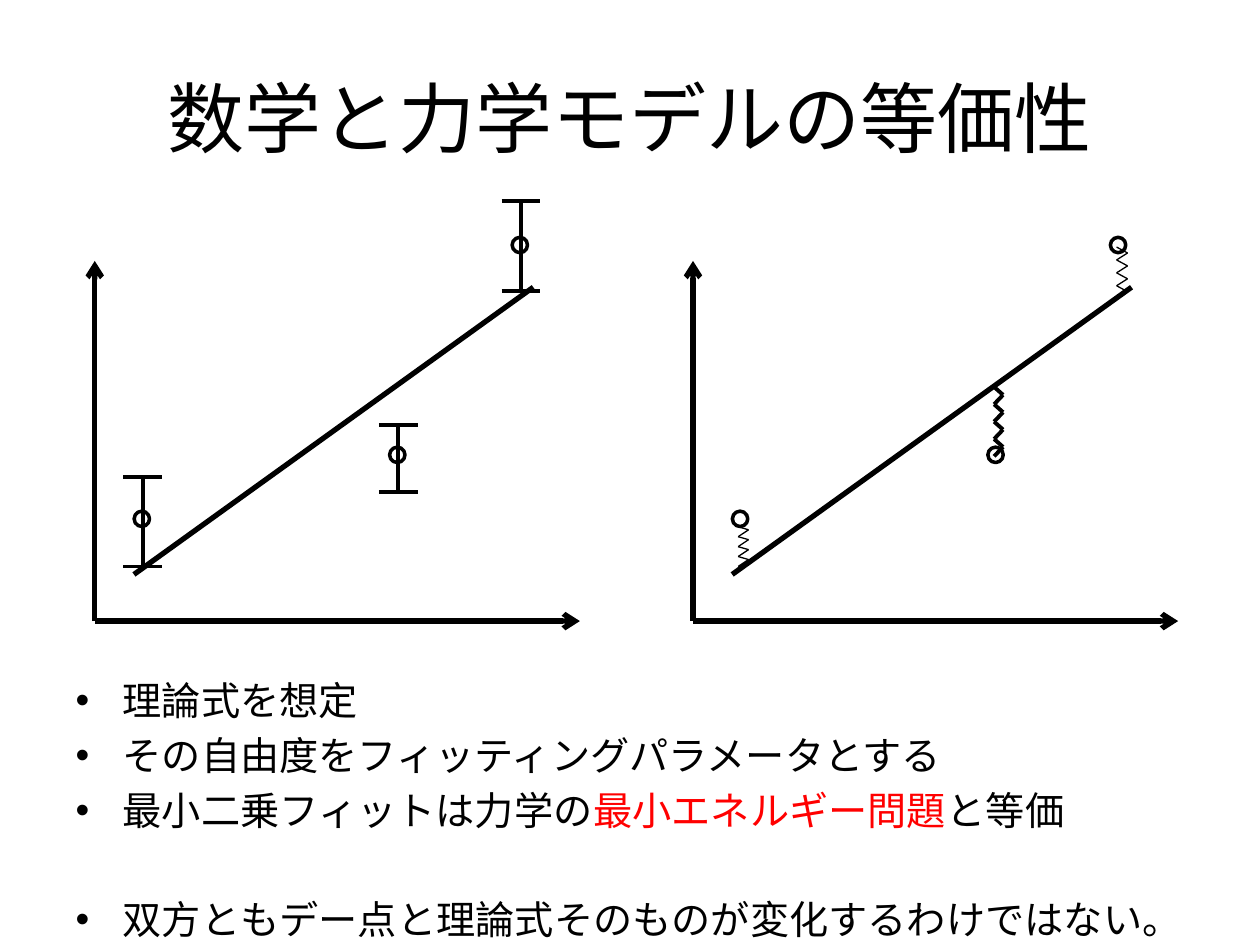
from dataclasses import dataclass

from lxml.etree import SubElement
from pptx import Presentation
from pptx.dml.color import RGBColor
from pptx.enum.shapes import MSO_CONNECTOR, MSO_SHAPE
from pptx.enum.text import MSO_ANCHOR, MSO_AUTO_SIZE, PP_ALIGN
from pptx.oxml.ns import qn
from pptx.util import Cm, Pt

TITLE = "数学と力学モデルの等価性"
BULLETS = [
    [("理論式を想定", "ink")],
    [("その自由度をフィッティングパラメータとする", "ink")],
    [("最小二乗フィットは力学の", "ink"), ("最小エネルギー問題", "accent"), ("と等価", "ink")],
    [("双方ともデー点と理論式そのものが変化するわけではない。", "ink")],
]

PANEL_X = {"errors": 1.91, "springs": 13.97}
BASE_Y, AXIS_TOP, AXIS_LENGTH = 12.52, 5.26, 9.78
FIT = (0.79, 11.58, 8.84, 5.79)
POINTS = [(0.95, 10.46), (6.1, 9.17), (8.57, 4.94)]
DIAMETER = 0.31
BAR_SPANS = [(9.61, 11.42), (8.56, 9.92), (4.06, 5.87)]
BAR_SHIFT, CAP_HALF = 0.02, 0.39
SPRINGS = [
    {"left": 0.91, "right": 1.12, "top": 10.62, "pitch": 0.2, "rise": 0.06, "width": 0.75},
    {"left": 6.07, "right": 6.25, "top": 7.8, "pitch": 0.35, "rise": 0.16, "width": 2.25},
    {"left": 8.54, "right": 8.76, "top": 4.98, "pitch": 0.26, "rise": 0.12, "width": 0.75},
]
COILS = 4


@dataclass(frozen=True)
class Theme:
    font: str = "Calibri"
    ink: RGBColor = RGBColor(0, 0, 0)
    accent: RGBColor = RGBColor(255, 0, 0)
    title: float = 44
    body: float = 22.4
    gap: float = 4.48
    break_gap: float = 35.7
    axis: float = 3
    bar: float = 2.25
    ring: float = 2


THEME = Theme()


def add_run(p, text, size, color):
    r = p.add_run()
    r.text = text
    r.font.name = THEME.font
    r.font.size = Pt(size)
    r.font.color.rgb = color


def place(sp, left, top, width, height):
    sp.left, sp.top, sp.width, sp.height = Cm(left), Cm(top), Cm(width), Cm(height)


def add_line(shapes, x1, y1, x2, y2, width, arrow=False):
    sp = shapes.add_connector(MSO_CONNECTOR.STRAIGHT, Cm(x1), Cm(y1), Cm(x2), Cm(y2))
    sp.line.color.rgb = THEME.ink
    sp.line.width = Pt(width)
    if arrow:
        SubElement(sp.line._get_or_add_ln(), qn("a:tailEnd"), type="arrow")
    SubElement(sp._element.spPr, qn("a:effectLst"))


def add_panel(shapes, x0):
    x1, y1, x2, y2 = FIT
    add_line(shapes, x0 + x1, y1, x0 + x2, y2, THEME.axis)
    add_line(shapes, x0, BASE_Y, x0, AXIS_TOP, THEME.axis, arrow=True)
    add_line(shapes, x0, BASE_Y, x0 + AXIS_LENGTH, BASE_Y, THEME.axis, arrow=True)
    for x, y in POINTS:
        sp = shapes.add_shape(MSO_SHAPE.OVAL, Cm(x0 + x - DIAMETER / 2),
                              Cm(y - DIAMETER / 2), Cm(DIAMETER), Cm(DIAMETER))
        sp.shadow.inherit = False
        sp.fill.background()
        sp.line.color.rgb = THEME.ink
        sp.line.width = Pt(THEME.ring)


def add_spring(shapes, x0, spring):
    group = shapes.add_group_shape().shapes
    left, right = x0 + spring["left"], x0 + spring["right"]
    for i in range(COILS):
        y = spring["top"] + i * spring["pitch"]
        bend = y + spring["rise"]
        add_line(group, left, y, right, bend, spring["width"])
        add_line(group, right, bend, left, y + spring["pitch"], spring["width"])


def add_error_bar(shapes, x, top, bottom):
    group = shapes.add_group_shape().shapes
    add_line(group, x, top, x, bottom, THEME.bar)
    for y in (top, bottom):
        add_line(group, x - CAP_HALF, y, x + CAP_HALF, y, THEME.bar)


def fill_title(sp):
    place(sp, 1.27, 0.76, 22.86, 3.18)
    tf = sp.text_frame
    tf.vertical_anchor = MSO_ANCHOR.MIDDLE
    p = tf.paragraphs[0]
    p.alignment = PP_ALIGN.CENTER
    add_run(p, TITLE, THEME.title, THEME.ink)


def fill_body(sp):
    place(sp, 1.27, 13.51, 22.86, 5.26)
    tf = sp.text_frame
    tf.auto_size = MSO_AUTO_SIZE.NONE
    tf.vertical_anchor = MSO_ANCHOR.TOP
    for i, runs in enumerate(BULLETS):
        p = tf.paragraphs[0] if i == 0 else tf.add_paragraph()
        last = i == len(BULLETS) - 1
        p.space_before = Pt(THEME.break_gap if last else THEME.gap)
        pPr = p._p.get_or_add_pPr()
        pPr.set("marL", str(Cm(0.95)))
        pPr.set("indent", str(-Cm(0.95)))
        SubElement(pPr, qn("a:buChar"), char="•")
        for text, color in runs:
            add_run(p, text, THEME.body, getattr(THEME, color))


def main():
    prs = Presentation()
    prs.slide_width, prs.slide_height = Cm(25.4), Cm(19.05)
    slide = prs.slides.add_slide(prs.slide_layouts[1])
    fill_title(slide.shapes.title)
    fill_body(slide.placeholders[1])

    add_panel(slide.shapes, PANEL_X["springs"])
    for spring in SPRINGS:
        add_spring(slide.shapes, PANEL_X["springs"], spring)

    add_panel(slide.shapes, PANEL_X["errors"])
    for (x, _), (top, bottom) in zip(POINTS, BAR_SPANS):
        add_error_bar(slide.shapes, PANEL_X["errors"] + x + BAR_SHIFT, top, bottom)

    prs.save("out.pptx")


if __name__ == "__main__":
    main()
